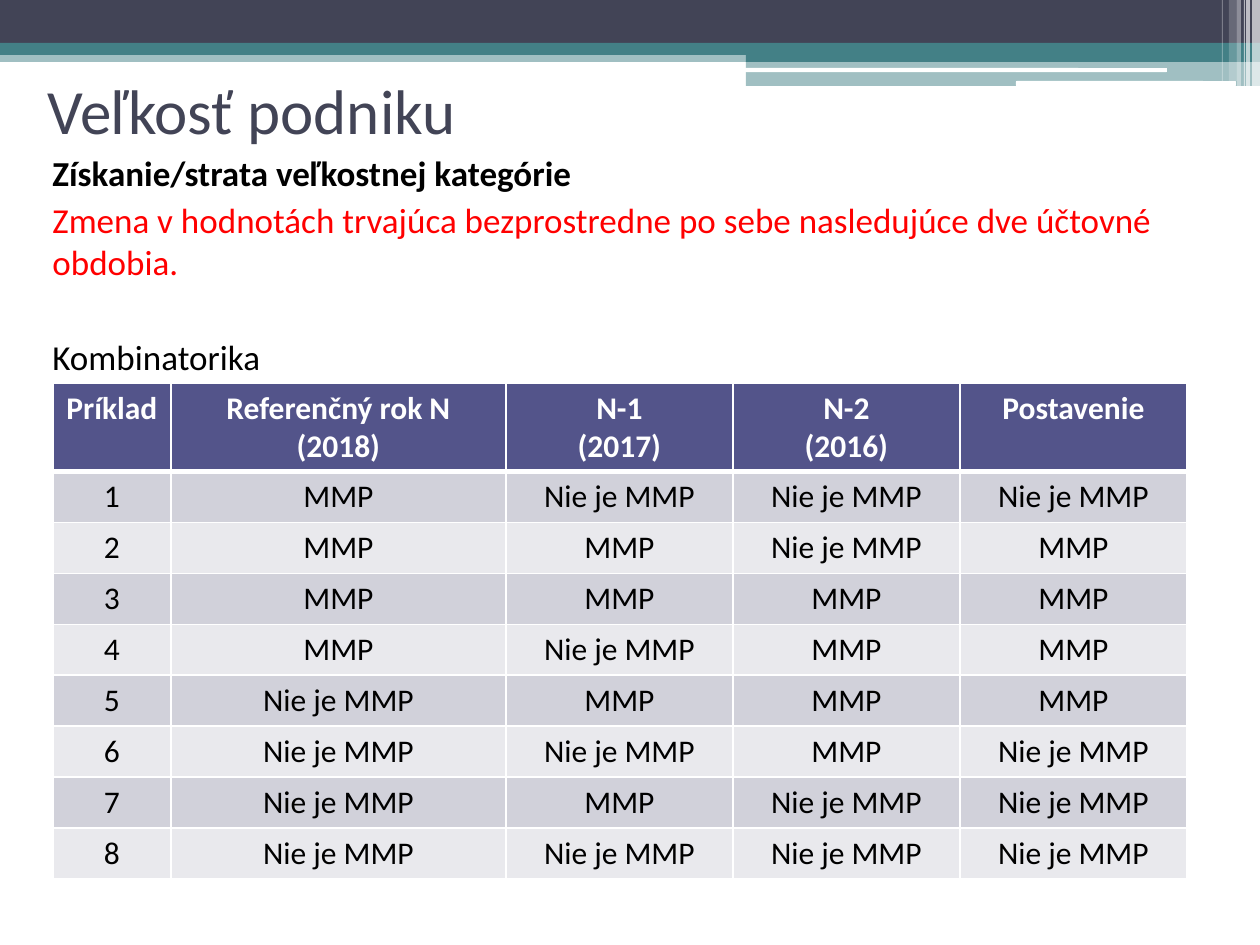
from dataclasses import dataclass

from lxml.etree import SubElement
from pptx import Presentation
from pptx.dml.color import RGBColor
from pptx.enum.shapes import MSO_SHAPE as Shape
from pptx.enum.text import MSO_ANCHOR as Anchor, PP_ALIGN as Align
from pptx.oxml.ns import qn
from pptx.util import Emu, Pt


@dataclass(frozen=True)
class Theme:
    font: str = "Calibri"
    navy: str = "424456"
    teal: str = "438086"
    white: str = "FFFFFF"
    black: str = "000000"
    red: str = "FF0000"
    header: str = "53548A"
    bands: tuple = ("D1D1DA", "E9E9ED")
    title_size: int = 36
    body_size: int = 20
    table_size: int = 18


THEME = Theme()
YES, NO = "MMP", "Nie je MMP"
HEADINGS = ["Príklad", "Referenčný rok N\n(2018)", "N-1\n(2017)", "N-2\n(2016)", "Postavenie"]
# Reference year, N-1, N-2, resulting status
CASES = [
    (YES, NO, NO, NO),
    (YES, YES, NO, YES),
    (YES, YES, YES, YES),
    (YES, NO, YES, YES),
    (NO, YES, YES, YES),
    (NO, NO, YES, NO),
    (NO, YES, NO, NO),
    (NO, NO, NO, NO),
]
COLUMN_WIDTHS = [118, 335, 227, 227, 227]
HEADER_HEIGHT, ROW_HEIGHT = 88, 51


def px(length):
    return Emu(round(length * 914400 / 126))


def style_para(para, size, color, bold=False):
    for span in para.runs:
        font = span.font
        font.name, font.size, font.bold = THEME.font, Pt(size), bold
        font.color.rgb = RGBColor.from_string(color)


def add_bar(page, box, color, opacity=100, rounded=False):
    kind = Shape.ROUNDED_RECTANGLE if rounded else Shape.RECTANGLE
    bar = page.shapes.add_shape(kind, *map(px, box))
    bar.shadow.inherit = False
    bar.line.fill.background()
    bar.fill.solid()
    bar.fill.fore_color.rgb = RGBColor.from_string(color)
    if opacity < 100:
        tint = bar.fill._xPr.find(".//" + qn("a:srgbClr"))
        SubElement(tint, qn("a:alpha"), val=str(opacity * 1000))


def add_banner(page, box):
    """Draw the coloured bands, the white rules and the light strips at the right end."""
    left, top, width, _ = box
    step = 746
    bars = [
        (0, 50, width, 12, THEME.teal, 50),
        (0, 0, width, 43, THEME.navy),
        (0, 43, width, 12, THEME.teal),
        (step, 49, width - step, 13, THEME.teal),
        (step, 61, width - step, 25, THEME.teal, 50),
        (step - 1, 68, 422, 4, THEME.white, 100, True),
        (1016, 81, 220, 5, THEME.white, 100, True),
    ]
    strips = [(1252, 8, 86, 65), (1246, 4, 86, 65), (1244, 1, 86, 60),
              (1237, 4, 86, 40), (1229, 8, 81, 20), (1222, 1, 81, 30)]
    bars += [(x, 0, w, h, THEME.white, opacity) for x, w, h, opacity in strips]
    for x, y, w, h, *look in bars:
        add_bar(page, (left + x, top + y, w, h), *look)


def place_title(page, box):
    title = page.shapes.title
    title.left, title.top, title.width, title.height = map(px, box)
    frame = title.text_frame
    frame.text = "Veľkosť podniku"
    frame.vertical_anchor = Anchor.MIDDLE
    para = frame.paragraphs[0]
    para.alignment = Align.LEFT
    style_para(para, THEME.title_size, THEME.navy)


def add_intro(page, box):
    lines = [
        ("Získanie/strata veľkostnej kategórie", THEME.black, True, 3),
        ("Zmena v hodnotách trvajúca bezprostredne po sebe nasledujúce dve účtovné obdobia.",
         THEME.red, False, 3),
        ("Kombinatorika", THEME.black, False, 30),
    ]
    frame = page.shapes.add_textbox(*map(px, box)).text_frame
    frame.word_wrap = True
    frame.text = "\n".join(line[0] for line in lines)
    for para, (_, color, bold, gap) in zip(frame.paragraphs, lines):
        para.space_before = Pt(gap)
        style_para(para, THEME.body_size, color, bold)


def add_borders(cell, widths):
    """Put white borders, in points, on the left, right, top and bottom sides."""
    props = cell._tc.get_or_add_tcPr()
    for index, (side, width) in enumerate(zip("LRTB", widths)):
        line = SubElement(props, qn("a:ln" + side), w=str(Pt(width)))
        fill = SubElement(line, qn("a:solidFill"))
        SubElement(fill, qn("a:srgbClr"), val=THEME.white)
        props.insert(index, line)


def add_cases_table(page, box):
    rows = [HEADINGS] + [[str(n), *case] for n, case in enumerate(CASES, 1)]
    table = page.shapes.add_table(len(rows), len(HEADINGS), *map(px, box)).table
    for column, width in zip(table.columns, COLUMN_WIDTHS):
        column.width = px(width)
    for r, values in enumerate(rows):
        is_header = r == 0
        table.rows[r].height = px(HEADER_HEIGHT if is_header else ROW_HEIGHT)
        fill = THEME.header if is_header else THEME.bands[(r - 1) % 2]
        color = THEME.white if is_header else THEME.black
        borders = (1, 1, 3 if r == 1 else 1, 3 if is_header else 1)
        for c, value in enumerate(values):
            cell = table.cell(r, c)
            cell.fill.solid()
            cell.fill.fore_color.rgb = RGBColor.from_string(fill)
            add_borders(cell, borders)
            cell.text_frame.text = value
            for para in cell.text_frame.paragraphs:
                para.alignment = Align.CENTER
                style_para(para, THEME.table_size, color, is_header)


def main():
    deck = Presentation()
    deck.slide_width, deck.slide_height = px(1260), px(945)
    page = deck.slides.add_slide(deck.slide_layouts[5])
    add_banner(page, (0, 0, 1260, 86))
    place_title(page, (35, 66, 1134, 87))
    add_intro(page, (40, 145, 1176, 236))
    table_height = HEADER_HEIGHT + ROW_HEIGHT * len(CASES)
    add_cases_table(page, (53, 383, sum(COLUMN_WIDTHS), table_height))
    deck.save("out.pptx")


if __name__ == "__main__":
    main()
